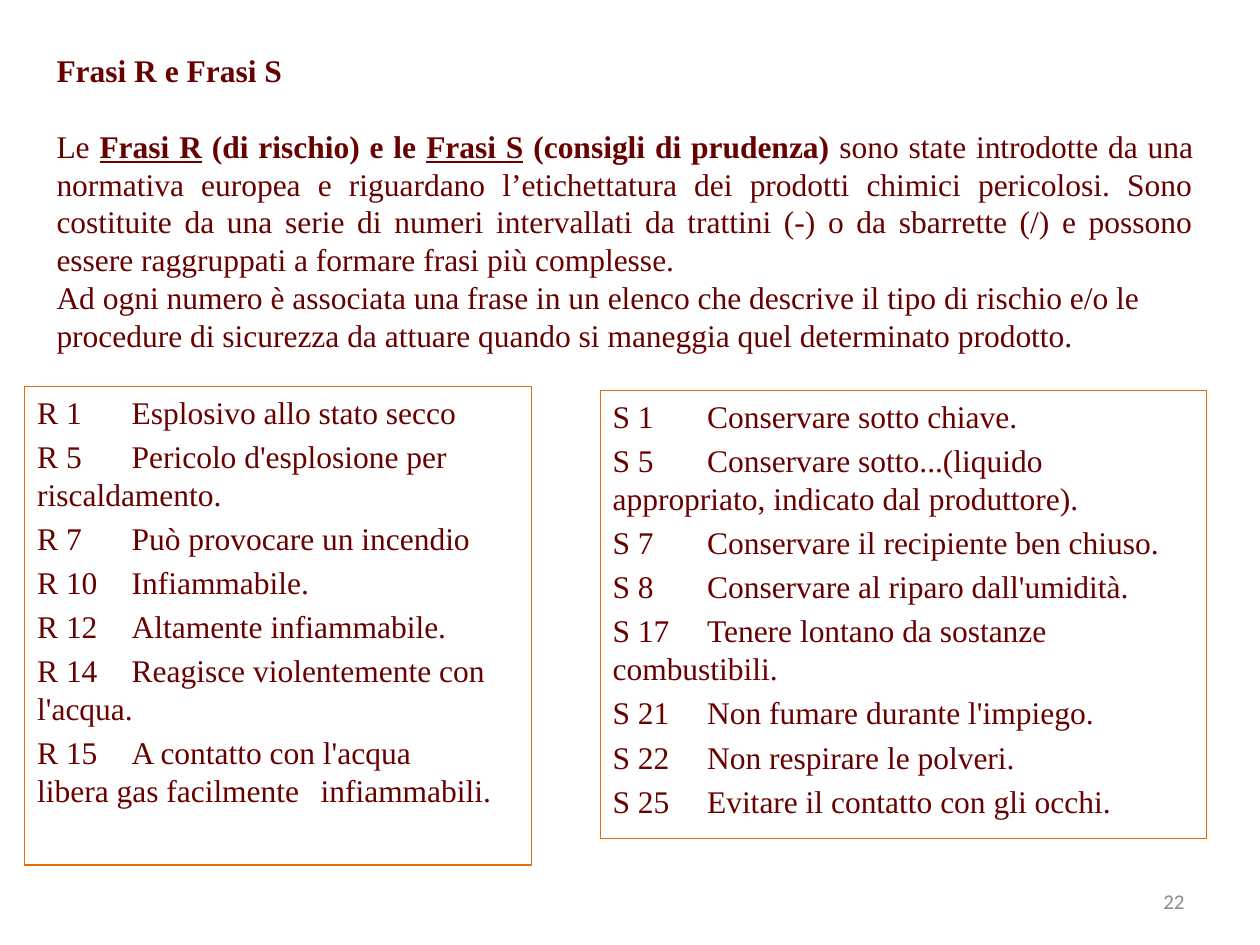
import pptx
import pptx.dml.color
import pptx.enum.shapes
import pptx.enum.text
import pptx.oxml.xmlchemy
import pptx.util
from pptx.util import Cm

ALIGN = pptx.enum.text.PP_ALIGN
ANCHOR = pptx.enum.text.MSO_ANCHOR
SERIF = "Times New Roman"
MAROON = "680000"
ORANGE = "E46C0A"
GREY = "8C8C8C"
TAB_STEP = Cm(1.905)
TAB_COUNT = 6

INTRO_RUNS = [
    ("Le ", False, False),
    ("Frasi R", True, True),
    (" (di rischio) e le ", True, False),
    ("Frasi S", True, True),
    (" (consigli di prudenza) ", True, False),
    ("sono state introdotte da una normativa europea e riguardano "
     "l’etichettatura dei prodotti chimici pericolosi. Sono costituite da una "
     "serie di numeri intervallati da trattini (-) o da sbarrette (/) e possono "
     "essere raggruppati a formare frasi più complesse.", False, False),
]
EXPLANATION = (
    "Ad ogni numero è associata una frase in un elenco che descrive il tipo di "
    "rischio e/o le procedure di sicurezza da attuare quando si maneggia quel "
    "determinato prodotto."
)
RISK_PHRASES = [
    "R 1 \tEsplosivo allo stato secco",
    "R 5 \tPericolo d'esplosione per \triscaldamento.",
    "R 7 \tPuò provocare un incendio",
    "R 10 \tInfiammabile.",
    "R 12 \tAltamente infiammabile.",
    "R 14 \tReagisce violentemente con \tl'acqua.",
    "R 15 \tA contatto con l'acqua \tlibera gas facilmente \tinfiammabili.",
]
SAFETY_PHRASES = [
    "S 1 \tConservare sotto chiave.",
    "S 5\tConservare sotto...(liquido \tappropriato, indicato dal produttore).",
    "S 7\tConservare il recipiente ben chiuso.",
    "S 8\tConservare al riparo dall'umidità.",
    "S 17 \tTenere lontano da sostanze \tcombustibili.",
    "S 21 \tNon fumare durante l'impiego.",
    "S 22 \tNon respirare le polveri.",
    "S 25 \tEvitare il contatto con gli occhi.",
]


def color(hex_string):
    return pptx.dml.color.RGBColor.from_string(hex_string)


def add_run(paragraph, text, bold=False, underline=False,
            size=18, font_name=SERIF, hex_color=MAROON):
    run = paragraph.add_run()
    run.text = text
    run.font.name = font_name
    run.font.size = pptx.util.Pt(size)
    run.font.bold = bold
    run.font.underline = underline
    run.font.color.rgb = color(hex_color)


def add_paragraph(frame, runs, alignment=ALIGN.LEFT):
    """Fill the empty first paragraph, or append a new one."""
    first = frame.paragraphs[0]
    paragraph = frame.add_paragraph() if first.runs else first
    paragraph.alignment = alignment
    for run in runs:
        add_run(paragraph, *run)
    return paragraph


def add_text_box(slide, left, top, width, height, anchor=ANCHOR.TOP):
    frame = slide.shapes.add_textbox(left, top, width, height).text_frame
    frame.word_wrap = True
    frame.vertical_anchor = anchor
    return frame


def add_tab_stops(paragraph):
    properties = paragraph._p.get_or_add_pPr()
    tab_list = pptx.oxml.xmlchemy.OxmlElement("a:tabLst")
    for number in range(1, TAB_COUNT + 1):
        tab = pptx.oxml.xmlchemy.OxmlElement("a:tab")
        tab.set("pos", str(number * TAB_STEP))
        tab.set("algn", "l")
        tab_list.append(tab)
    properties.append(tab_list)


def add_phrase_box(slide, left, top, width, height, phrases):
    shape = slide.shapes.add_shape(
        pptx.enum.shapes.MSO_SHAPE.RECTANGLE, left, top, width, height)
    shape.shadow.inherit = False
    shape.fill.background()
    shape.line.color.rgb = color(ORANGE)
    shape.line.width = pptx.util.Pt(0.75)
    frame = shape.text_frame
    frame.word_wrap = True
    frame.vertical_anchor = ANCHOR.TOP
    for index, phrase in enumerate(phrases):
        paragraph = add_paragraph(frame, [(phrase,)])
        paragraph.space_before = pptx.util.Pt(1.8 if index else 0)
        paragraph.space_after = pptx.util.Pt(1.8)
        add_tab_stops(paragraph)


def add_introduction(slide):
    frame = add_text_box(slide, Cm(0.89), Cm(0.91), Cm(23.42), Cm(6.4))
    title = add_paragraph(frame, [("Frasi R e Frasi S", True)], ALIGN.JUSTIFY)
    title.space_after = pptx.util.Pt(21.6)
    add_paragraph(frame, INTRO_RUNS, ALIGN.JUSTIFY)
    add_paragraph(frame, [(EXPLANATION,)])


def add_page_number(slide, number):
    frame = add_text_box(slide, Cm(18.21), Cm(17.65), Cm(5.92), Cm(1.02),
                         ANCHOR.MIDDLE)
    add_paragraph(frame, [(number, False, False, 12, "Calibri", GREY)],
                  ALIGN.RIGHT)


def main():
    presentation = pptx.Presentation()
    presentation.slide_width = Cm(25.4)
    presentation.slide_height = Cm(19.05)
    slide = presentation.slides.add_slide(presentation.slide_layouts[6])
    add_introduction(slide)
    add_phrase_box(slide, Cm(0.5), Cm(7.79), Cm(10.21), Cm(9.65), RISK_PHRASES)
    add_phrase_box(slide, Cm(12.1), Cm(7.88), Cm(12.22), Cm(9.02),
                   SAFETY_PHRASES)
    add_page_number(slide, "22")
    presentation.save("out.pptx")


if __name__ == "__main__":
    main()
